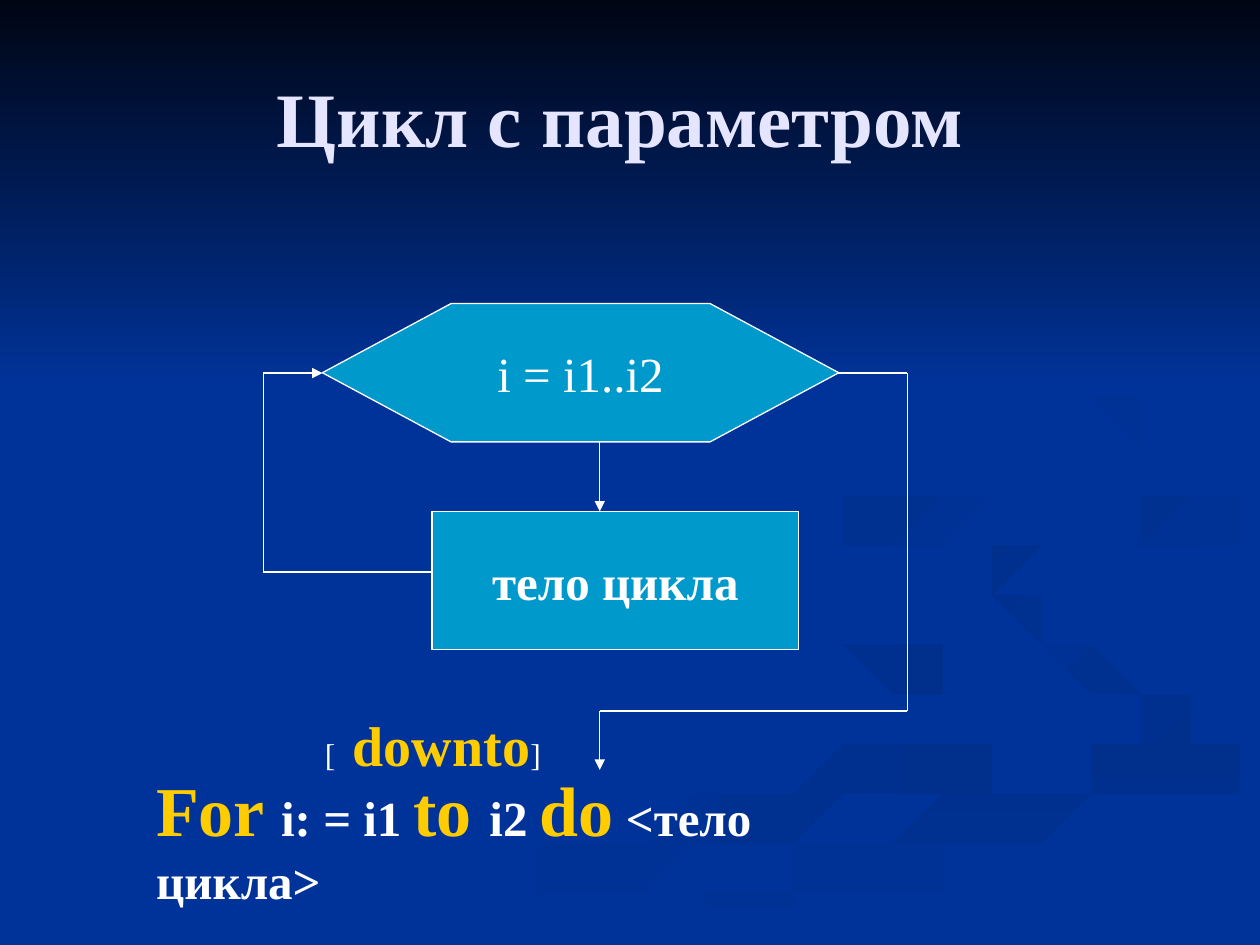
from math import hypot

from lxml.etree import SubElement
from pptx import Presentation
from pptx.dml.color import RGBColor
from pptx.enum.shapes import MSO_CONNECTOR as LINE, MSO_SHAPE as SHAPE
from pptx.enum.text import MSO_ANCHOR as ANCHOR, MSO_AUTO_SIZE as AUTO, PP_ALIGN as ALIGN
from pptx.oxml.ns import qn
from pptx.util import Cm, Pt

FONT = "Times New Roman"
COLORS = {
    "back": "003399", "night": "000514", "title": "E5E5FF", "block": "0099CC",
    "text": "FFFFFF", "keyword": "FFCC00", "swirl": "002F8C",
}
STEPS = 6  # smoothing steps between two points of a swirl

# start colour, end colour, clockwise angle, first and last width, centre line
SWIRLS = [
    ("swirl", "back", 45, 0.1, 0.6,
     [(22.4, 7.8), (22.6, 8.9), (21.6, 9.7), (19, 10.4), (16.2, 11), (14.9, 11.6)]),
    ("back", "swirl", 0, 0.1, 1.2,
     [(14.6, 11.9), (16.2, 12.9), (18.8, 13.6), (20.1, 14.5), (19.2, 15.3),
      (15.2, 16.3), (9, 18.5)]),
    ("back", "swirl", 45, 0.1, 0.6,
     [(18.5, 11.9), (19.6, 12.8), (22.1, 13.6), (23.6, 14.5), (22.8, 15.3)]),
    ("swirl", "back", 45, 0.4, 0.3,
     [(25.3, 10.4), (22.4, 10.8), (20.2, 11.6), (20.7, 12.5)]),
    ("swirl", "back", 90, 0.7, 1,
     [(25.2, 15.2), (21.8, 16), (17.8, 17.3), (14.6, 18.5)]),
]


def rgb(name):
    return RGBColor.from_string(COLORS[name])


def shade(shape, start, end, angle):
    """Gradient without outline, from start to end, the angle being clockwise."""
    shape.shadow.inherit = False
    shape.line.fill.background()
    shape.fill.gradient()
    shape.fill.gradient_angle = -angle % 360
    for stop, color in zip(shape.fill.gradient_stops, (start, end)):
        stop.color.rgb = rgb(color)


def smooth(points):
    """Catmull-Rom curve through the points."""
    padded = [points[0], *points, points[-1]]
    curve = []
    for stretch in zip(padded, padded[1:], padded[2:], padded[3:]):
        for step in range(STEPS):
            t = step / STEPS
            curve.append(tuple(
                b + t * (c - a + t * (2 * a - 5 * b + 4 * c - d + t * (3 * (b - c) + d - a))) / 2
                for a, b, c, d in zip(*stretch)))
    return curve + [points[-1]]


def ribbon(points, first_width, last_width):
    """Outline of a band along the points, its width changing evenly."""
    curve = smooth(points)
    last = len(curve) - 1
    upper, lower = [], []
    for i, (x, y) in enumerate(curve):
        before, after = curve[max(i - 1, 0)], curve[min(i + 1, last)]
        dx, dy = after[0] - before[0], after[1] - before[1]
        half = (first_width + (last_width - first_width) * i / last) / 2 / hypot(dx, dy)
        upper.append((x - dy * half, y + dx * half))
        lower.append((x + dy * half, y - dx * half))
    return upper + lower[::-1]


def add_backdrop(slide):
    slide.background.fill.solid()
    slide.background.fill.fore_color.rgb = rgb("back")
    for start, end, angle, first_width, last_width, points in SWIRLS:
        outline = ribbon(points, first_width, last_width)
        builder = slide.shapes.build_freeform(*outline[0], scale=Cm(1))
        builder.add_line_segments(outline[1:], close=True)
        shade(builder.convert_to_shape(), start, end, angle)
    sky = slide.shapes.add_shape(SHAPE.RECTANGLE, 0, 0, Cm(25.4), Cm(7.82))
    shade(sky, "night", "back", 90)


def add_run(paragraph, text, size, color="text", bold=True):
    run = paragraph.add_run()
    run.text = text
    run.font.name = FONT
    run.font.size = Pt(size)
    run.font.bold = bold
    run.font.color.rgb = rgb(color)


def add_title(slide, text):
    title = slide.shapes.title
    title.left, title.top, title.width, title.height = Cm(1.27), Cm(0.76), Cm(22.86), Cm(3.18)
    title.text_frame.vertical_anchor = ANCHOR.MIDDLE
    paragraph = title.text_frame.paragraphs[0]
    paragraph.alignment = ALIGN.CENTER
    add_run(paragraph, text, 44, "title")
    slide.shapes._spTree.append(title._element)  # in front of the backdrop


def add_block(slide, kind, box, text, bold):
    block = slide.shapes.add_shape(kind, *map(Cm, box))
    block.shadow.inherit = False
    block.fill.solid()
    block.fill.fore_color.rgb = rgb("block")
    block.line.color.rgb = rgb("text")
    block.line.width = Pt(0.75)
    block.text_frame.word_wrap = False
    block.text_frame.vertical_anchor = ANCHOR.MIDDLE
    paragraph = block.text_frame.paragraphs[0]
    paragraph.alignment = ALIGN.CENTER
    add_run(paragraph, text, 28, bold=bold)
    return block


def add_route(slide, *points):
    """Straight lines from point to point, with an arrowhead at the last."""
    for begin, end in zip(points, points[1:]):
        link = slide.shapes.add_connector(LINE.STRAIGHT, *map(Cm, begin + end))
        link.line.color.rgb = rgb("text")
        link.line.width = Pt(0.75)
        if end == points[-1]:
            SubElement(link.line._get_or_add_ln(), qn("a:tailEnd"), type="triangle")
        SubElement(link._element.spPr, qn("a:effectLst"))


def add_code(slide, box, runs):
    frame = slide.shapes.add_textbox(*map(Cm, box)).text_frame
    frame.word_wrap = True
    frame.auto_size = AUTO.SHAPE_TO_FIT_TEXT
    paragraph = frame.paragraphs[0]
    paragraph.space_before = Pt(5)
    for run in runs:
        add_run(paragraph, *run)


def main():
    deck = Presentation()
    deck.slide_width, deck.slide_height = Cm(25.4), Cm(19.05)
    slide = deck.slides.add_slide(deck.slide_layouts[5])
    add_backdrop(slide)
    add_title(slide, "Цикл с параметром ")

    header = add_block(slide, SHAPE.HEXAGON, (6.5, 6.12, 10.41, 2.79), "i = i1..i2", False)
    header.adjustments[0] = 0.93
    add_block(slide, SHAPE.RECTANGLE, (8.71, 10.31, 7.39, 2.79), "тело цикла", True)

    back_x, stem_x, exit_x = 5.31, 12.09, 18.29
    header_y, body_y, exit_y = 7.52, 11.53, 14.33
    add_route(slide, (stem_x, 8.91), (stem_x, 10.31))
    add_route(slide, (8.71, body_y), (back_x, body_y), (back_x, header_y), (6.5, header_y))
    add_route(slide, (16.9, header_y), (exit_x, header_y), (exit_x, exit_y),
              (stem_x, exit_y), (stem_x, 15.52))

    add_code(slide, (2.9, 15.32, 16, 1.96), [
        ("For ", 40, "keyword"), ("i: = i1 ", 28), ("to ", 40, "keyword"), ("i2 ", 28),
        ("do", 40, "keyword"), (" ", 28, "text", False), ("<тело цикла>", 28)])
    add_code(slide, (6.3, 13.92, 5.79, 1.96), [
        ("[", 18, "text", False), (" ", 40), ("downto", 32, "keyword"),
        ("]", 18, "text", False)])
    deck.save("out.pptx")


if __name__ == "__main__":
    main()
